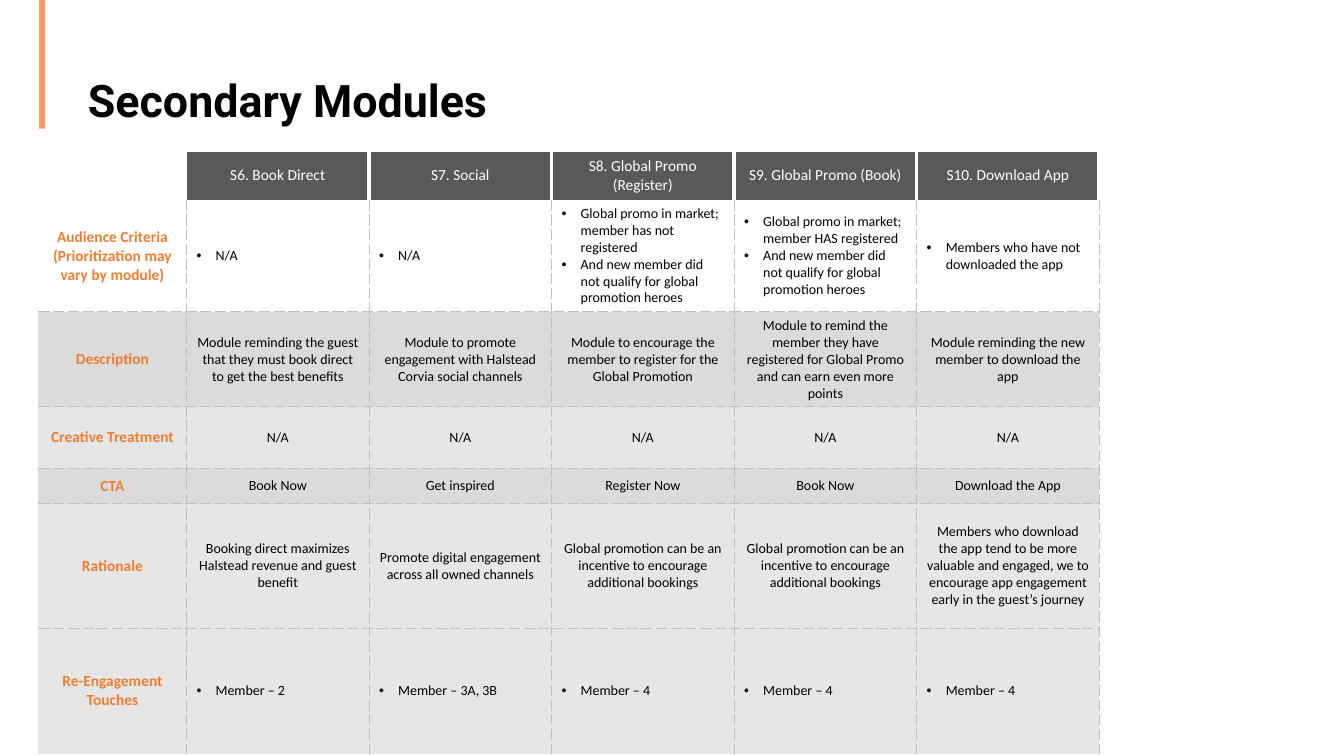
from dataclasses import dataclass

import lxml.etree
import pptx
import pptx.dml.color
import pptx.enum.shapes
import pptx.enum.text
import pptx.oxml.ns
import pptx.util

Cm, Pt = pptx.util.Cm, pptx.util.Pt
RGB = pptx.dml.color.RGBColor.from_string
ALIGN = pptx.enum.text.PP_ALIGN
ANCHOR = pptx.enum.text.MSO_ANCHOR
qn = pptx.oxml.ns.qn


@dataclass(frozen=True)
class Theme:
    title_font: str = "Roboto"
    body_font: str = "Calibri"
    title_size: int = 32
    head_size: int = 11
    body_size: int = 10
    black: str = "000000"
    white: str = "FFFFFF"
    accent: str = "FF9662"
    label: str = "ED7D31"
    header: str = "595959"
    band_dark: str = "DCDADA"
    band_light: str = "E7E6E6"
    grid: str = "BFBFBF"


THEME = Theme()
GRID_LINE = (THEME.grid, 0.5, "sysDash")
THIN_WHITE = (THEME.white, 1, "solid")
THICK_WHITE = (THEME.white, 3, "solid")

HEADERS = ["S6. Book Direct", "S7. Social", "S8. Global Promo (Register)",
           "S9. Global Promo (Book)", "S10. Download App"]
NOT_QUALIFIED = "And new member did not qualify for global promotion heroes"
PROMO_RATIONALE = "Global promotion can be an incentive to encourage additional bookings"

# label, height in cm, fill, bulleted, one entry per module (a list holds several paragraphs)
ROWS = [
    ("Audience Criteria (Prioritization may vary by module)", 2.34, THEME.white, True,
     ["N/A", "N/A",
      ["Global promo in market; member has not registered", NOT_QUALIFIED],
      ["Global promo in market; member HAS registered", NOT_QUALIFIED],
      "Members who have not downloaded the app"]),
    ("Description", 2.21, THEME.band_dark, False,
     ["Module reminding the guest that they must book direct to get the best benefits",
      "Module to promote engagement with Halstead Corvia social channels",
      "Module to encourage the member to register for the Global Promotion",
      "Module to remind the member they have registered for Global Promo "
      "and can earn even more points",
      "Module reminding the new member to download the app"]),
    ("Creative Treatment", 1.55, THEME.band_light, False, ["N/A"] * 5),
    ("CTA", 0.89, THEME.band_dark, False,
     ["Book Now", "Get inspired", "Register Now", "Book Now", "Download the App"]),
    ("Rationale", 3.15, THEME.band_light, False,
     ["Booking direct maximizes Halstead revenue and guest benefit",
      "Promote digital engagement across all owned channels",
      PROMO_RATIONALE, PROMO_RATIONALE,
      "Members who download the app tend to be more valuable and engaged, "
      "we to encourage app engagement early in the guest’s journey"]),
    ("Re-Engagement Touches", 3.15, THEME.band_light, True,
     ["Member – 2", "Member – 3A, 3B"] + ["Member – 4"] * 3),
]


def add_run(p, text, font, size, color, bold=False):
    r = p.add_run()
    r.text = text
    r.font.name, r.font.size, r.font.bold = font, Pt(size), bold
    r.font.color.rgb = RGB(color)


def add_bullet(p):
    pPr = p._p.get_or_add_pPr()
    pPr.set("marL", str(Cm(0.48)))
    pPr.set("indent", str(Cm(-0.48)))
    lxml.etree.SubElement(pPr, qn("a:buFont")).set("typeface", "Arial")
    lxml.etree.SubElement(pPr, qn("a:buChar")).set("char", "•")


def set_borders(cell, **lines):
    """Draw the given sides (L, R, T, B) and clear the others."""
    tcPr = cell._tc.get_or_add_tcPr()
    for side in "LRTB":
        ln = lxml.etree.SubElement(tcPr, qn(f"a:ln{side}"))
        if not lines.get(side):
            lxml.etree.SubElement(ln, qn("a:noFill"))
            continue
        color, width, dash = lines[side]
        ln.set("w", str(Pt(width)))
        fill = lxml.etree.SubElement(ln, qn("a:solidFill"))
        lxml.etree.SubElement(fill, qn("a:srgbClr")).set("val", color)
        lxml.etree.SubElement(ln, qn("a:prstDash")).set("val", dash)


def fill_cell(cell, content, fill, size, color, bold=False, bulleted=False):
    cell.fill.solid()
    cell.fill.fore_color.rgb = RGB(fill)
    cell.vertical_anchor = ANCHOR.MIDDLE
    tf = cell.text_frame
    for i, text in enumerate(content if isinstance(content, list) else [content]):
        p = tf.add_paragraph() if i else tf.paragraphs[0]
        if bulleted:
            add_bullet(p)
        p.alignment = ALIGN.LEFT if bulleted else ALIGN.CENTER
        add_run(p, text, THEME.body_font, size, color, bold)


def add_accent_bar(s, left, top, width, height):
    sp = s.shapes.add_shape(pptx.enum.shapes.MSO_SHAPE.RECTANGLE, left, top, width, height)
    sp.shadow.inherit = False
    sp.fill.solid()
    sp.fill.fore_color.rgb = RGB(THEME.accent)
    sp.line.fill.background()


def add_title(s, text, left, top, width, height):
    sp = s.shapes.title
    sp.left, sp.top, sp.width, sp.height = left, top, width, height
    tf = sp.text_frame
    tf.word_wrap = True
    tf.auto_size = pptx.enum.text.MSO_AUTO_SIZE.NONE
    tf.vertical_anchor = ANCHOR.BOTTOM
    p = tf.paragraphs[0]
    p.alignment = ALIGN.LEFT
    p.line_spacing = 0.8
    add_run(p, text, THEME.title_font, THEME.title_size, THEME.black, True)


def add_header_row(table):
    for col, text in enumerate([""] + HEADERS):
        cell = table.cell(0, col)
        set_borders(cell, L=THICK_WHITE if col > 1 else THIN_WHITE,
                    R=THICK_WHITE if col else THIN_WHITE, T=THIN_WHITE)
        fill_cell(cell, text, THEME.header if col else THEME.white,
                  THEME.head_size, THEME.white)


def add_module_table(s, left, top, width, height):
    label_width, header_height = Cm(3.73), Cm(0.97)
    frame = s.shapes.add_table(len(ROWS) + 1, len(HEADERS) + 1, left, top, width, height)
    table = frame.table
    table.first_row = table.horz_banding = False
    for col, column in enumerate(table.columns):
        column.width = (width - label_width) // len(HEADERS) if col else label_width
    table.rows[0].height = header_height
    add_header_row(table)
    for row, (label, row_height, fill, bulleted, entries) in enumerate(ROWS, 1):
        table.rows[row].height = Cm(row_height)
        for col, content in enumerate([label] + entries):
            cell = table.cell(row, col)
            set_borders(cell, L=GRID_LINE if col else None, R=GRID_LINE,
                        T=GRID_LINE if row > 1 else None,
                        B=GRID_LINE if row < len(ROWS) else None)
            if col:
                fill_cell(cell, content, fill, THEME.body_size, THEME.black,
                          bulleted=bulleted)
            else:
                fill_cell(cell, content, fill, THEME.head_size, THEME.label, bold=True)


def main():
    prs = pptx.Presentation()
    prs.slide_width, prs.slide_height = Cm(33.87), Cm(19.05)
    s = prs.slides.add_slide(prs.slide_layouts.get_by_name("Title Only"))
    add_accent_bar(s, Cm(0.99), Cm(0), Cm(0.15), Cm(3.24))
    add_title(s, "Secondary Modules", Cm(1.96), Cm(1.55), Cm(30.12), Cm(1.75))
    add_module_table(s, Cm(0.97), Cm(3.82), Cm(26.73), Cm(14.26))
    prs.save("out.pptx")


if __name__ == "__main__":
    main()
